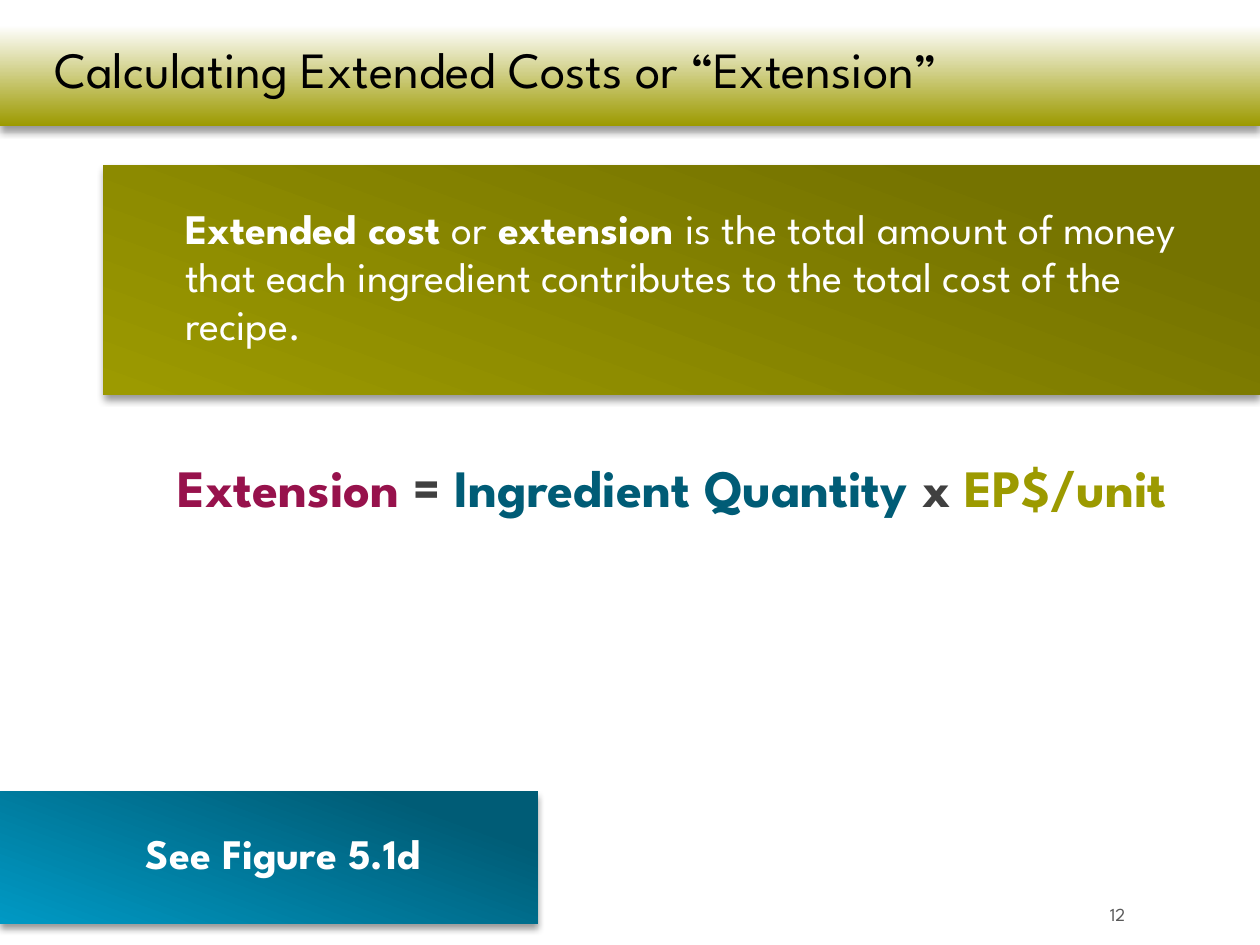
"""Build the slide on calculating extended costs."""
import pptx
import pptx.dml.color
import pptx.enum.shapes
import pptx.enum.text
import pptx.oxml
import pptx.oxml.ns
import pptx.util

FONT = "League Spartan"
ALIGN = pptx.enum.text.PP_ALIGN
ANCHOR = pptx.enum.text.MSO_ANCHOR
SHADOW = (
    f'<a:effectLst {pptx.oxml.ns.nsdecls("a")}>'
    '<a:outerShdw blurRad="50800" dist="38100" dir="5400000" rotWithShape="0">'
    '<a:srgbClr val="000000"><a:alpha val="40000"/></a:srgbClr>'
    '</a:outerShdw></a:effectLst>'
)

prs = pptx.Presentation()
prs.slide_width = pptx.util.Inches(10)
prs.slide_height = pptx.util.Inches(7.5)
W, H = prs.slide_width, prs.slide_height
s = prs.slides.add_slide(prs.slide_layouts[5])


def rgb(color):
    return pptx.dml.color.RGBColor.from_string(color)


def write(sp, runs, size, align=ALIGN.LEFT, anchor=ANCHOR.TOP, spacing=1.0, top=0.05):
    tf = sp.text_frame
    tf.word_wrap = True
    tf.auto_size = pptx.enum.text.MSO_AUTO_SIZE.NONE
    tf.vertical_anchor = anchor
    tf.margin_top = pptx.util.Inches(top)
    p = tf.paragraphs[0]
    p.alignment = align
    p.line_spacing = spacing
    for text, color, bold in runs:
        r = p.add_run()
        r.text = text
        r.font.name = FONT
        r.font.size = pptx.util.Pt(size)
        r.font.bold = bold
        r.font.color.rgb = rgb(color)
    return p


bands = [
    ((0, 0, 1, 0.1333), ("FFFFFF", "9C9A00"), 0.2, 90),
    ((0, 0.8373, 0.427, 0.14), ("005C76", "0099C4"), 0.17, 110),
    ((0.082, 0.1747, 0.918, 0.2427), ("757300", "9C9A00"), 0.17, 110),
]
for (x, y, w, h), colors, start, angle in bands:
    sp = s.shapes.add_shape(
        pptx.enum.shapes.MSO_SHAPE.RECTANGLE,
        int(x * W), int(y * H), int(w * W), int(h * H))
    sp.line.fill.background()
    sp.fill.gradient()
    sp.fill.gradient_angle = 360 - angle
    for stop, color, position in zip(sp.fill.gradient_stops, colors, (start, 1)):
        stop.color.rgb = rgb(color)
        stop.position = position
    sp._element.spPr.append(pptx.oxml.parse_xml(SHADOW))

title = s.shapes.title
title.left, title.top = int(W * 0.033), 0
title.width, title.height = int(W * 0.933), int(H * 0.1333)
s.shapes._spTree.append(title._element)
write(title, [("Calculating Extended Costs or “Extension”", "000000", False)],
      29, anchor=ANCHOR.MIDDLE, spacing=0.8, top=0.22)

texts = [
    ((0.067, 0.48, 0.933, 0.1333),
     [("Extension", "97124C", True), (" = ", "404040", True),
      ("Ingredient Quantity ", "005C76", True), ("x ", "404040", True),
      ("EP$/unit", "9C9A00", True)],
     dict(size=30, align=ALIGN.CENTER, spacing=0.95)),
    ((0.106, 0.8373, 0.319, 0.1307),
     [("See Figure 5.1d", "FFFFFF", True)],
     dict(size=24, anchor=ANCHOR.MIDDLE)),
    ((0.137, 0.212, 0.852, 0.1667),
     [("Extended cost ", "FFFFFF", True), ("or", "FFFFFF", False),
      (" extension ", "FFFFFF", True),
      ("is the total amount of money that each ingredient contributes "
       "to the total cost of the recipe.", "FFFFFF", False)],
     dict(size=24, spacing=0.95)),
    ((0.785, 0.932, 0.118, 0.0533),
     [("12", "595959", False)],
     dict(size=10.5, align=ALIGN.RIGHT, anchor=ANCHOR.BOTTOM)),
]
for (x, y, w, h), runs, style in texts:
    sp = s.shapes.add_textbox(int(x * W), int(y * H), int(w * W), int(h * H))
    p = write(sp, runs, **style)
    if style["align"] == ALIGN.CENTER if "align" in style else False:
        pPr = p._p.get_or_add_pPr()
        pPr.set("marL", str(pptx.util.Inches(0.38)))
        pPr.set("indent", str(pptx.util.Inches(-0.38)))

prs.save("out.pptx")
